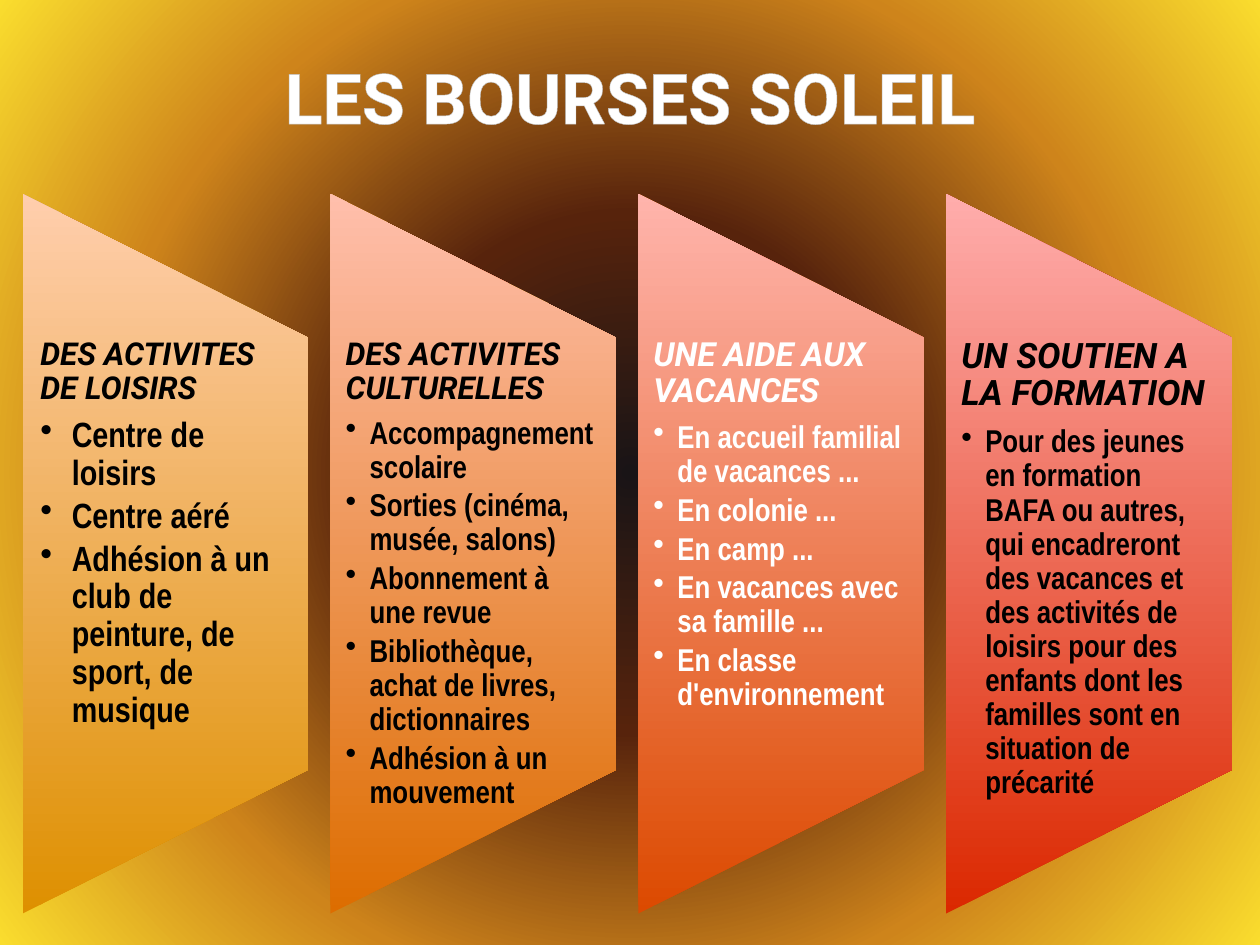
from dataclasses import dataclass

from lxml import etree
from pptx import Presentation
from pptx import util as u
from pptx.dml.color import RGBColor
from pptx.enum import shapes, text
from pptx.oxml import ns


@dataclass(frozen=True)
class Theme:
    heading_font: str = "Roboto"
    body_font: str = "Arial Narrow"
    dark: str = "000000"
    light: str = "FFFFFF"
    title_outline: str = "BFBFBF"
    title_size: int = 40
    small: int = 18
    medium: int = 19
    large: int = 20
    backdrop: tuple = ((0, "191416"), (33, "57230C"), (67, "CE841B"), (100, "FADD2E"))
    panels: tuple = (
        ("DE9000", "FFCEAD"),
        ("DD6D00", "FFBFAC"),
        ("DC4A00", "FFB4AC"),
        ("DB2800", "FFADAC"),
    )


@dataclass(frozen=True)
class Grant:
    heading: str
    items: tuple
    heading_size: int
    item_size: int
    color: str
    inset: float = 0.12
    indent: float = 0.19


THEME = Theme()
UPWARD = ("lin", {"ang": "16200000", "scaled": "0"})

GRANTS = (
    Grant("DES ACTIVITES DE LOISIRS",
          ("Centre de loisirs", "Centre aéré",
           "Adhésion à un club de peinture, de sport, de musique"),
          THEME.small, THEME.large, THEME.dark, 0.14, 0.25),
    Grant("DES ACTIVITES CULTURELLES",
          ("Accompagnement scolaire", "Sorties (cinéma, musée, salons)",
           "Abonnement à une revue", "Bibliothèque, achat de livres, dictionnaires",
           "Adhésion à un mouvement"),
          THEME.small, THEME.small, THEME.dark),
    Grant("UNE AIDE AUX VACANCES",
          ("En accueil familial de vacances ...", "En colonie ...", "En camp ...",
           "En vacances avec sa famille ...", "En classe d'environnement"),
          THEME.medium, THEME.small, THEME.light),
    Grant("UN SOUTIEN A LA FORMATION",
          ("Pour des jeunes en formation BAFA ou autres, qui encadreront des vacances "
           "et des activités de loisirs pour des enfants dont les familles sont en "
           "situation de précarité",),
          THEME.large, THEME.small, THEME.dark),
)


def node(tag, attributes=None, *children):
    element = etree.Element(ns.qn(f"a:{tag}"), attributes or {})
    element.extend(children)
    return element


def paint_gradient(fill, owner, stops, direction):
    fill.solid()
    solid = next(owner.iter(ns.qn("a:solidFill")))
    stop_list = node("gsLst", None, *(
        node("gs", {"pos": str(position * 1000)}, node("srgbClr", {"val": color}))
        for position, color in stops))
    solid.getparent().replace(
        solid, node("gradFill", {"rotWithShape": "0"}, stop_list, direction))


def style(font, name, size, color, italic=False):
    font.name = name
    font.size = u.Pt(size)
    font.bold = True
    font.italic = italic
    font.color.rgb = RGBColor.from_string(color)


def set_spacing(paragraph, percent_after):
    paragraph.line_spacing = 0.9
    after = node("spcAft", None, node("spcPct", {"val": str(percent_after * 1000)}))
    paragraph.line_spacing and paragraph._p.get_or_add_pPr().insert(1, after)


def set_bullet(paragraph, indent):
    properties = paragraph._p.get_or_add_pPr()
    properties.set("marL", str(u.Inches(indent)))
    properties.set("indent", str(-u.Inches(indent)))
    properties.insert(2, node("buChar", {"char": "•"}))


def add_backdrop(slide):
    center = node("path", {"path": "circle"},
                  node("fillToRect", dict.fromkeys("ltrb", "50000")))
    paint_gradient(slide.background.fill, slide.element, THEME.backdrop, center)


def add_title(slide, left, top, width, height):
    frame = slide.shapes.add_textbox(left, top, width, height).text_frame
    frame.word_wrap = True
    frame.auto_size = text.MSO_AUTO_SIZE.SHAPE_TO_FIT_TEXT
    paragraph = frame.paragraphs[0]
    paragraph.alignment = text.PP_ALIGN.CENTER
    run = paragraph.add_run()
    run.text = "LES BOURSES SOLEIL"
    style(run.font, THEME.heading_font, THEME.title_size, THEME.light)
    outline = node("solidFill", None, node("srgbClr", {"val": THEME.title_outline}))
    run._r.get_or_add_rPr().insert(0, node("ln", {"w": str(u.Pt(1))}, outline))


def add_panel(slide, left, top, width, height, colors):
    shift = (height - width) // 2
    panel = slide.shapes.add_shape(
        shapes.MSO_SHAPE.FLOWCHART_MANUAL_OPERATION,
        left - shift, top + shift, height, width)
    panel.rotation = 270
    panel.shadow.inherit = False
    panel.line.fill.background()
    tag, attributes = UPWARD
    paint_gradient(panel.fill, panel.element, zip((0, 100), colors),
                   node(tag, attributes))


def add_grant_text(slide, left, top, width, height, grant):
    frame = slide.shapes.add_textbox(left, top, width, height).text_frame
    frame.word_wrap = True
    frame.margin_left = frame.margin_right = u.Inches(grant.inset)
    frame.margin_top = frame.margin_bottom = 0
    heading = frame.paragraphs[0]
    heading.text = grant.heading
    set_spacing(heading, 35)
    style(heading.font, THEME.heading_font, grant.heading_size, grant.color, True)
    for item in grant.items:
        paragraph = frame.add_paragraph()
        paragraph.text = item
        paragraph.level = 1
        set_spacing(paragraph, 15)
        set_bullet(paragraph, grant.indent)
        style(paragraph.font, THEME.body_font, grant.item_size, grant.color)


def add_grants(slide, left, top, width, height):
    column = u.Inches(2.27)
    pitch = (width - column) // (len(GRANTS) - 1)
    for index, (grant, colors) in enumerate(zip(GRANTS, THEME.panels)):
        x = left + index * pitch
        add_panel(slide, x, top, column, height, colors)
        add_grant_text(slide, x, top + height // 5, column, height * 3 // 5, grant)


def main():
    deck = Presentation()
    deck.slide_width, deck.slide_height = u.Inches(10), u.Inches(7.5)
    slide = deck.slides.add_slide(deck.slide_layouts[6])
    add_backdrop(slide)
    add_grants(slide, u.Inches(0.18), u.Inches(1.54), u.Inches(9.6), u.Inches(5.71))
    add_title(slide, 0, u.Inches(0.38), deck.slide_width, u.Inches(0.78))
    deck.save("out.pptx")


if __name__ == "__main__":
    main()
